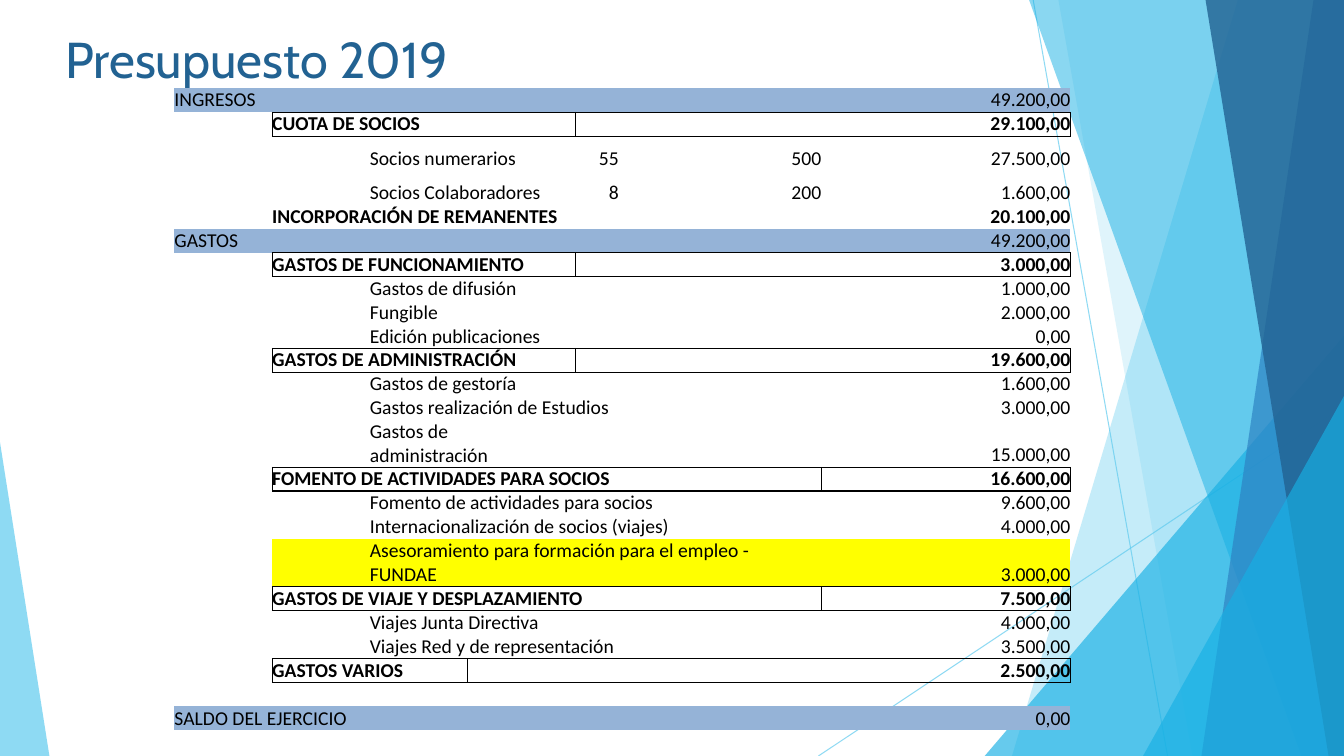
import pptx
import pptx.chart.data
import pptx.dml.color
import pptx.enum.shapes
import pptx.enum.text
import pptx.oxml.ns
import pptx.util
from lxml import etree

Pt = pptx.util.Pt
ALIGN = pptx.enum.text.PP_ALIGN
ANCHOR = pptx.enum.text.MSO_ANCHOR
W, H = 960, 540
NO_STYLE = "{2D5ABB26-0587-4C30-8999-92F81FD0307C}"
SKY, CYAN, BLUE, NAVY = "5FCBEF", "17B0E4", "2E83C3", "226292"
BLACK, BAND, MARK = "000000", "95B3D7", "FFFF00"
LINE = 17.1  # height of one table line


def rgb(value):
    return pptx.dml.color.RGBColor.from_string(value)


def sub(parent, tag, **attrs):
    return etree.SubElement(parent, pptx.oxml.ns.qn(tag), **attrs)


class Deck:
    text_font, title_font = "Calibri", "Cabin"
    text_size, title_size = 14, 36

    def __init__(self):
        self.prs = pptx.Presentation()
        self.prs.slide_width, self.prs.slide_height = Pt(W), Pt(H)
        self.s = self.prs.slides.add_slide(self.prs.slide_layouts[6])

    def paint(self, fill, color, opacity):
        fill.solid()
        fill.fore_color.rgb = rgb(color)
        clr = fill._xPr.find(".//" + pptx.oxml.ns.qn("a:srgbClr"))
        sub(clr, "a:alpha", val=str(opacity * 1000))

    def finish(self, sp, color, opacity):
        sp.shadow.inherit = False
        sp.line.fill.background()
        self.paint(sp.fill, color, opacity)

    def line(self, x1, y1, x2, y2, color, opacity):
        sp = self.s.shapes.add_connector(
            pptx.enum.shapes.MSO_CONNECTOR.STRAIGHT, Pt(x1), Pt(y1), Pt(x2), Pt(y2))
        sp.line.width = Pt(0.75)
        self.paint(sp.line.fill, color, opacity)
        sub(sp._element.spPr, "a:effectLst")

    def band(self, top_left, top_right, bottom_left, color, opacity):
        """A full-height strip that reaches the right edge of the slide."""
        fb = self.s.shapes.build_freeform(Pt(top_left), 0)
        fb.add_line_segments([(Pt(top_right), 0), (Pt(W), Pt(H)), (Pt(bottom_left), Pt(H))])
        self.finish(fb.convert_to_shape(), color, opacity)

    def triangle(self, x, y, w, apex, color, opacity):
        """A right triangle standing on the bottom edge."""
        sp = self.s.shapes.add_shape(
            pptx.enum.shapes.MSO_SHAPE.ISOSCELES_TRIANGLE, Pt(x), Pt(y), Pt(w), Pt(H - y))
        sp.adjustments[0] = apex
        self.finish(sp, color, opacity)

    def title(self, text, x, y, w, h):
        tf = self.s.shapes.add_textbox(Pt(x), Pt(y), Pt(w), Pt(h)).text_frame
        tf.word_wrap = True
        tf.text = text
        font = tf.paragraphs[0].runs[0].font
        font.size, font.name = Pt(self.title_size), self.title_font
        font.color.rgb = rgb(NAVY)

    def table(self, x, y, widths, heights):
        frame = self.s.shapes.add_table(len(heights), len(widths), Pt(x), Pt(y),
                                        Pt(sum(widths)), Pt(sum(heights)))
        tbl = frame.table
        tbl.first_row = tbl.horz_banding = False
        frame._element.find(".//" + pptx.oxml.ns.qn("a:tableStyleId")).text = NO_STYLE
        for col, width in zip(tbl.columns, widths):
            col.width = Pt(width)
        for row, height in zip(tbl.rows, heights):
            row.height = Pt(height)
        return tbl

    def cell(self, cell, text, fill, bold, right):
        cell.margin_left = cell.margin_top = cell.margin_bottom = 0
        cell.margin_right = 0 if right else Pt(5)
        cell.vertical_anchor = ANCHOR.BOTTOM
        if fill:
            cell.fill.solid()
            cell.fill.fore_color.rgb = rgb(fill)
        else:
            cell.fill.background()
        p = cell.text_frame.paragraphs[0]
        if not text:
            sub(p._p, "a:endParaRPr", sz=str(self.text_size * 100))
            return
        p.text = text
        p.alignment = ALIGN.RIGHT if right else ALIGN.LEFT
        font = p.runs[0].font
        font.size, font.name, font.bold = Pt(self.text_size), self.text_font, bold
        font.color.rgb = rgb(BLACK)

    def borders(self, cell, sides):
        """sides maps L, R, T, B, in that order, to a width in points."""
        tcPr = cell._tc.get_or_add_tcPr()
        for i, (side, width) in enumerate(sides.items()):
            ln = sub(tcPr, "a:ln" + side, w=str(Pt(width)))
            sub(sub(ln, "a:solidFill"), "a:srgbClr", val=BLACK)
            tcPr.insert(i, ln)


# kind: (column of the label, fill, first filled column, bold, boxed)
KINDS = {
    "band": (0, BAND, 0, False, False),
    "group": (1, None, 0, True, True),
    "total": (1, None, 0, True, False),
    "item": (2, None, 0, False, False),
    "marked": (2, MARK, 1, False, False),
}
TAIL = (4, 5)
# kind, label, amount, merged column ranges, quantity and price
ROWS = [
    ("band", "INGRESOS", "49.200,00", [(2, 3)]),
    ("group", "CUOTA DE SOCIOS", "29.100,00", [(1, 3)]),
    ("item", "Socios numerarios", "27.500,00", [(2, 3)], "55", "500"),
    ("item", "Socios Colaboradores", "1.600,00", [(2, 3)], "8", "200"),
    ("total", "INCORPORACIÓN DE REMANENTES", "20.100,00", [(1, 5)]),
    ("band", "GASTOS", "49.200,00", [TAIL]),
    ("group", "GASTOS DE FUNCIONAMIENTO", "3.000,00", [(1, 3), TAIL]),
    ("item", "Gastos de difusión", "1.000,00", [(2, 3), TAIL]),
    ("item", "Fungible", "2.000,00", [TAIL]),
    ("item", "Edición publicaciones", "0,00", [(2, 3), TAIL]),
    ("group", "GASTOS DE ADMINISTRACIÓN", "19.600,00", [(1, 3), TAIL]),
    ("item", "Gastos de gestoría", "1.600,00", [(2, 3), TAIL]),
    ("item", "Gastos realización de Estudios", "3.000,00", [(2, 5)]),
    ("item", "Gastos de administración", "15.000,00", [(2, 3), TAIL]),
    ("group", "FOMENTO DE ACTIVIDADES PARA SOCIOS", "16.600,00", [(1, 5)]),
    ("item", "Fomento de actividades para socios", "9.600,00", [(2, 5)]),
    ("item", "Internacionalización de socios (viajes)", "4.000,00", [(2, 5)]),
    ("marked", "Asesoramiento para formación para el empleo - FUNDAE", "3.000,00", [(2, 5)]),
    ("group", "GASTOS DE VIAJE Y DESPLAZAMIENTO", "7.500,00", [(1, 5)]),
    ("item", "Viajes Junta Directiva", "4.000,00", [(2, 3), TAIL]),
    ("item", "Viajes Red y de representación", "3.500,00", [(2, 5)]),
    ("group", "GASTOS VARIOS", "2.500,00", [(1, 2), TAIL]),
    ("item", "", "", [TAIL]),
    ("band", "SALDO DEL EJERCICIO", "0,00", [(0, 1), TAIL]),
]
WIDTHS = [69.8, 69.8, 69.8, 77, 31, 144.7, 178]
LAST = len(WIDTHS) - 1


def row_height(kind, *rest):
    if kind == "marked":
        return 2 * LINE
    return 24.5 if len(rest) > 3 else LINE


def budget(deck):
    tbl = deck.table(124.6, 63, WIDTHS, [row_height(*row) for row in ROWS])
    for r, (kind, label, amount, merges, *extra) in enumerate(ROWS):
        label_col, fill, fill_from, bold, boxed = KINDS[kind]
        texts = {label_col: label, LAST: amount, **dict(zip(TAIL, extra))}
        for c in range(len(WIDTHS)):
            cell = tbl.cell(r, c)
            deck.cell(cell, texts.get(c), fill if c >= fill_from else None,
                      bold, c >= TAIL[0])
            if boxed and c >= label_col:
                sides = {"L": 0.5} if c == label_col else {"R": 0.5} if c == LAST else {}
                sides["T"] = 1 if "VIAJE" in label else 0.5
                sides["B"] = 1 if "FOMENTO" in label else 0.5
                deck.borders(cell, sides)
        for first, last in merges:
            tbl.cell(r, first).merge(tbl.cell(r, last))
    tbl.cell(16, 0).merge(tbl.cell(17, 0))


def main():
    deck = Deck()
    # Background facets
    deck.line(738, 0, 834, H, SKY, 70)
    deck.line(W, 290, 584.6, H, SKY, 70)
    deck.band(884.2, W, 722.9, SKY, 36)
    deck.band(756, W, 851.8, SKY, 20)
    deck.triangle(703.4, 239.8, 256.6, 1, CYAN, 66)
    deck.band(735.1, W, 929.5, CYAN, 50)
    deck.band(938.2, W, 858.2, BLUE, 70)
    deck.band(861.1, W, 949, NAVY, 80)
    deck.triangle(816.5, 283, 143.5, 1, CYAN, 66)
    deck.triangle(0, 316, 35.3, 0, SKY, 70)
    # Title and budget table
    deck.title("Presupuesto 2019", 39.6, 16.6, 633.6, 62.6)
    budget(deck)
    deck.prs.save("out.pptx")


if __name__ == "__main__":
    main()
